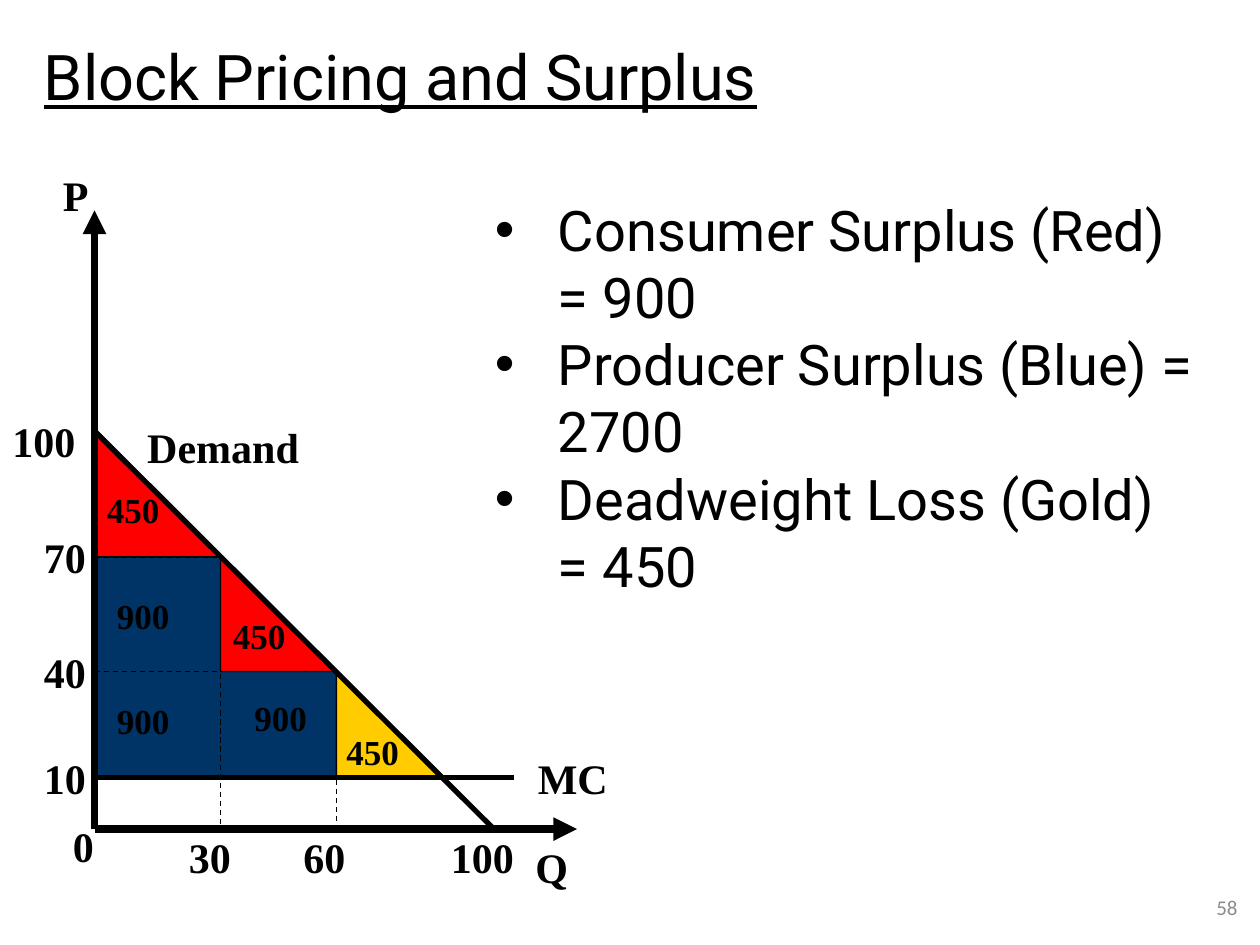
from dataclasses import dataclass

import pptx
import pptx.dml.color
import pptx.enum.dml
import pptx.enum.shapes
import pptx.enum.text
import pptx.oxml
import pptx.oxml.ns
import pptx.util

Inches = pptx.util.Inches
Pt = pptx.util.Pt
Point = tuple[float, float]

COLORS = {"black": "000000", "blue": "003366", "red": "FF0000", "gold": "FFCC00", "gray": "8C8C8C"}
QUANTITY = {0: 0.75, 30: 1.75, 60: 2.67, 90: 3.5, 100: 3.92}
PRICE = {100: 3.42, 70: 4.42, 40: 5.33, 10: 6.17, 0: 6.58}
AXIS_FONT = {"name": "Times New Roman", "size": Pt(24), "bold": True}
AREA_FONT = AXIS_FONT | {"size": Pt(20)}
TITLE_FONT = {"name": "Roboto", "size": Pt(36), "underline": True}
BODY_FONT = {"name": "Roboto", "size": Pt(32)}
NUMBER_FONT = {"name": "Calibri", "size": Pt(12)}


@dataclass
class Area:
    corners: list[tuple[int, int]]
    color: str


@dataclass
class Line:
    start: Point
    end: Point
    width: float = 0.75
    dashed: bool = False
    arrow: bool = False


@dataclass
class Label:
    text: str
    left: float
    top: float
    width: float
    height: float = 0.5


AREAS = [
    Area([(0, 100), (0, 10), (90, 10)], "blue"),
    Area([(60, 40), (60, 10), (90, 10)], "gold"),
    Area([(30, 70), (30, 40), (60, 40)], "red"),
    Area([(0, 100), (0, 70), (30, 70)], "red"),
]


def at(quantity: int, price: int) -> Point:
    return QUANTITY[quantity], PRICE[price]


ORIGIN = at(0, 0)
LINES = [
    Line(ORIGIN, (4.58, PRICE[0]), 4.5, arrow=True),
    Line(ORIGIN, (QUANTITY[0], 1.67), 4.5, arrow=True),
    Line(at(0, 100), at(100, 0), 3),
    Line(at(0, 10), (4, PRICE[10]), dashed=True),
    Line(at(0, 40), at(60, 40), dashed=True),
    Line(at(0, 70), at(30, 70), dashed=True),
    Line(at(30, 70), at(30, 0), dashed=True),
    Line(at(60, 40), at(60, 0), dashed=True),
    Line(at(0, 10), (4.08, PRICE[10]), 3),
]
AXIS_LABELS = [
    Label("0", 0.48, 6.46, 0.37),
    Label("P", 0.4, 1.3, 0.4),
    Label("Q", 4.15, 6.63, 0.46),
    Label("Demand", 1.07, 3.3, 1.41),
    Label("MC", 4.17, 5.92, 0.76),
    Label("100", 0, 3.25, 0.7),
    *[Label(str(price), 0.25, PRICE[price] - 0.25, 0.53) for price in (70, 40, 10)],
    Label("30", 1.4, 6.55, 0.53),
    Label("60", 2.31, 6.55, 0.53),
    Label("100", 3.48, 6.55, 0.7),
]
AREA_LABELS = [
    Label(text, left, top, 0.62, 0.43)
    for text, left, top in [
        ("450", 0.75, 3.83),
        ("450", 1.75, 4.83),
        ("450", 2.65, 5.75),
        ("900", 0.83, 5.5),
        ("900", 0.83, 4.67),
        ("900", 1.92, 5.48),
    ]
]
SURPLUSES = [
    "Consumer Surplus (Red) = 900",
    "Producer Surplus (Blue) = 2700",
    "Deadweight Loss (Gold) = 450",
]


def color(name: str) -> pptx.dml.color.RGBColor:
    return pptx.dml.color.RGBColor.from_string(COLORS[name])


def add_element(parent, tag: str, **attributes: str) -> None:
    element = pptx.oxml.parse_xml(f"<{tag} {pptx.oxml.ns.nsdecls('a')}/>")
    for name, value in attributes.items():
        element.set(name, value)
    parent.append(element)


def format_font(paragraph, values: dict, color_name: str = "black") -> None:
    for run in paragraph.runs:
        for name, value in values.items():
            setattr(run.font, name, value)
        run.font.color.rgb = color(color_name)


def draw_area(slide, area: Area) -> None:
    points = [tuple(Inches(value) for value in at(*corner)) for corner in area.corners]
    builder = slide.shapes.build_freeform(*points[0])
    builder.add_line_segments(points[1:], close=True)
    shape = builder.convert_to_shape()
    shape.shadow.inherit = False
    shape.fill.solid()
    shape.fill.fore_color.rgb = color(area.color)
    shape.line.color.rgb = color("black")
    shape.line.width = Pt(0.75)


def draw_line(slide, line: Line) -> None:
    ends = [Inches(value) for value in line.start + line.end]
    connector = slide.shapes.add_connector(pptx.enum.shapes.MSO_CONNECTOR.STRAIGHT, *ends)
    connector.line.color.rgb = color("black")
    connector.line.width = Pt(line.width)
    if line.dashed:
        connector.line.dash_style = pptx.enum.dml.MSO_LINE.DASH
    properties = connector.element.spPr
    if line.arrow:
        add_element(properties.find(pptx.oxml.ns.qn("a:ln")), "a:tailEnd", type="triangle")
    add_element(properties, "a:effectLst")


def draw_label(slide, label: Label, font: dict, color_name: str = "black", wrap: bool = False):
    box = slide.shapes.add_textbox(
        *[Inches(value) for value in (label.left, label.top, label.width, label.height)]
    )
    frame = box.text_frame
    frame.word_wrap = wrap
    frame.text = label.text
    for paragraph in frame.paragraphs:
        format_font(paragraph, font, color_name)
    return frame


def draw_bullets(slide, label: Label) -> None:
    frame = draw_label(slide, label, BODY_FONT, wrap=True)
    for paragraph in frame.paragraphs:
        properties = paragraph._p.get_or_add_pPr()
        properties.set("marL", str(Inches(0.5)))
        properties.set("indent", str(-Inches(0.5)))
        add_element(properties, "a:buFont", typeface="Arial")
        add_element(properties, "a:buChar", char="•")


def main() -> None:
    presentation = pptx.Presentation()
    presentation.slide_width = Inches(10)
    presentation.slide_height = Inches(7.5)
    slide = presentation.slides.add_slide(presentation.slide_layouts[6])

    for area in AREAS:
        draw_area(slide, area)
    for line in LINES:
        draw_line(slide, line)
    for label in AXIS_LABELS:
        draw_label(slide, label, AXIS_FONT)
    for label in AREA_LABELS:
        draw_label(slide, label, AREA_FONT)

    title = Label("Block Pricing and Surplus", 0.25, 0.25, 9.08, 1.6)
    draw_label(slide, title, TITLE_FONT, wrap=True)
    draw_bullets(slide, Label("\n".join(SURPLUSES), 3.83, 1.5, 5.75, 3.83))
    number = draw_label(slide, Label("58", 9.17, 7, 0.75, 0.4), NUMBER_FONT, "gray", True)
    number.vertical_anchor = pptx.enum.text.MSO_ANCHOR.MIDDLE
    number.paragraphs[0].alignment = pptx.enum.text.PP_ALIGN.RIGHT
    presentation.save("out.pptx")


if __name__ == "__main__":
    main()
